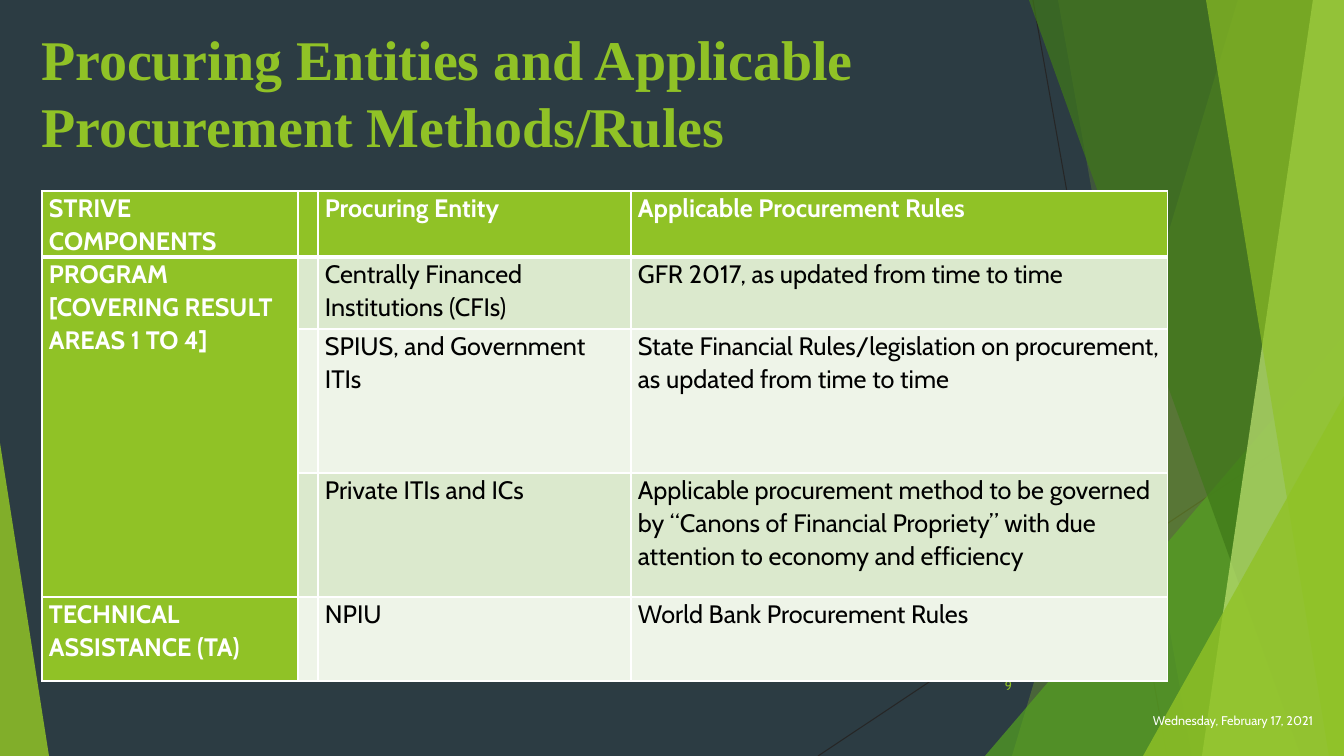
from dataclasses import dataclass

from lxml import etree
from pptx import Presentation
from pptx.dml import color
from pptx.enum import shapes, text
from pptx.oxml import ns
from pptx.util import Emu, Pt

SCALE = 12192000 / 1344  # EMU per px
WIDTH, HEIGHT = 1344, 756
LIME, WHITE, BLACK = "90C226", "FFFFFF", "000000"
LIGHT_BANDS = ("DBE9CD", "EEF4E8")
BODY_FONT, TITLE_FONT = "Cabin", "Times New Roman"


@dataclass
class Ray:
    start: tuple[int, int]
    end: tuple[int, int]


@dataclass
class Shard:
    """Polygon reaching the right edge, from its upper to its lower left corner."""
    top_x: int
    bottom_x: int
    fill: str
    opacity: int


@dataclass
class Wedge:
    """Right triangle standing on the bottom edge."""
    left: int
    top: int
    width: int
    apex: float
    fill: str
    opacity: int


@dataclass
class Label:
    words: str
    left: int
    top: int
    width: int
    height: int
    tint: str


RAYS = [Ray((1033, 0), (1167, 756)), Ray((1344, 406), (818, 756))]
FACETS = [
    Shard(1238, 1012, LIME, 30),
    Shard(1058, 1192, LIME, 20),
    Wedge(985, 336, 359, 1, "54A021", 72),
    Shard(1029, 1301, "3F7819", 70),
    Shard(1313, 1202, "C0E474", 70),
    Shard(1206, 1329, LIME, 65),
    Wedge(1143, 396, 201, 1, LIME, 80),
    Wedge(0, 443, 49, 0, LIME, 85),
]
LABELS = [
    Label("Wednesday, February 17, 2021", 1126, 701, 197, 40, WHITE),
    Label("9", 947, 666, 75, 40, LIME),
]
COLUMNS = [256, 20, 313, 537]
ROWS = [66, 72, 144, 124, 84]
ENTRIES = [
    ["STRIVE COMPONENTS", "", "Procuring Entity", "Applicable Procurement Rules"],
    ["PROGRAM [COVERING RESULT AREAS 1 TO 4]", "",
     "Centrally Financed Institutions (CFIs)",
     "GFR 2017, as updated from time to time"],
    ["", "", "SPIUS, and Government ITIs",
     "State Financial Rules/legislation on procurement, as updated from time to time"],
    ["", "", "Private ITIs and ICs",
     "Applicable procurement method to be governed by “Canons of Financial Propriety” "
     "with due attention to economy and efficiency"],
    ["TECHNICAL ASSISTANCE (TA)", "", "NPIU", "World Bank Procurement Rules"],
]


def px(length: float) -> Emu:
    return Emu(round(length * SCALE))


def paint(target, tint: str, opacity: int = 100) -> None:
    """Give a fill a solid colour."""
    target.solid()
    target.fore_color.rgb = color.RGBColor.from_string(tint)
    if opacity < 100:
        swatch = target._xPr.find(".//" + ns.qn("a:srgbClr"))
        etree.SubElement(swatch, ns.qn("a:alpha"), val=str(opacity * 1000))


def style(para, name: str, size: int, tint: str, bold: bool = False) -> None:
    para.font.name = name
    para.font.size = Pt(size)
    para.font.bold = bold
    paint(para.font.fill, tint)


def draw_ray(page, ray: Ray) -> None:
    line = page.shapes.add_connector(
        shapes.MSO_CONNECTOR.STRAIGHT, *map(px, ray.start + ray.end))
    line.line.width = Pt(0.75)
    paint(line.line.fill, "262626")
    etree.SubElement(line._element.spPr, ns.qn("a:effectLst"))


def draw_facet(page, facet: Shard | Wedge) -> None:
    if isinstance(facet, Shard):
        builder = page.shapes.build_freeform(facet.top_x, 0, scale=SCALE)
        builder.add_line_segments(
            [(WIDTH, 0), (WIDTH, HEIGHT), (facet.bottom_x, HEIGHT)], close=True)
        shape = builder.convert_to_shape()
    else:
        shape = page.shapes.add_shape(
            shapes.MSO_SHAPE.ISOSCELES_TRIANGLE, px(facet.left), px(facet.top),
            px(facet.width), px(HEIGHT - facet.top))
        shape.adjustments[0] = facet.apex
    shape.shadow.inherit = False
    shape.line.fill.background()
    paint(shape.fill, facet.fill, facet.opacity)


def draw_label(page, label: Label) -> None:
    box = page.shapes.add_textbox(
        px(label.left), px(label.top), px(label.width), px(label.height))
    frame = box.text_frame
    frame.word_wrap = True
    frame.vertical_anchor = text.MSO_ANCHOR.MIDDLE
    para = frame.paragraphs[0]
    para.text = label.words
    para.alignment = text.PP_ALIGN.RIGHT
    style(para, BODY_FONT, 9, label.tint)


def set_title(page, words: str) -> None:
    box = page.shapes.title
    box.left, box.top, box.width, box.height = map(px, (31, 18, 1095, 146))
    frame = box.text_frame
    frame.word_wrap = True
    frame.auto_size = text.MSO_AUTO_SIZE.NONE
    frame.vertical_anchor = text.MSO_ANCHOR.BOTTOM
    para = frame.paragraphs[0]
    para.text = words
    para.alignment = text.PP_ALIGN.LEFT
    para.line_spacing = 1.0
    style(para, TITLE_FONT, 40, LIME, bold=True)


def set_borders(cell, bottom: float, top: float) -> None:
    properties = cell._tc.get_or_add_tcPr()
    for side, width in (("L", 1), ("R", 1), ("T", top), ("B", bottom)):
        edge = etree.SubElement(properties, ns.qn(f"a:ln{side}"), w=str(Pt(width)))
        solid = etree.SubElement(edge, ns.qn("a:solidFill"))
        etree.SubElement(solid, ns.qn("a:srgbClr"), val=WHITE)


def draw_table(page) -> None:
    table = page.shapes.add_table(
        len(ROWS), len(COLUMNS), px(42), px(191), px(sum(COLUMNS)), px(sum(ROWS))).table
    for column, width in zip(table.columns, COLUMNS):
        column.width = px(width)
    for row, height in zip(table.rows, ROWS):
        row.height = px(height)
    for r, entries in enumerate(ENTRIES):
        for c, words in enumerate(entries):
            cell = table.cell(r, c)
            heading = r == 0 or c == 0
            set_borders(cell, bottom=3 if r == 0 else 1, top=3 if r == 1 else 1)
            paint(cell.fill, LIME if heading else LIGHT_BANDS[(r - 1) % 2])
            cell.margin_left = cell.margin_right = px(7)
            cell.margin_top = cell.margin_bottom = 0
            para = cell.text_frame.paragraphs[0]
            para.text = words
            para.line_spacing = 1.07
            style(para, BODY_FONT, 18, WHITE if heading else BLACK, bold=heading)
    table.cell(1, 0).merge(table.cell(3, 0))


def main() -> None:
    deck = Presentation()
    deck.slide_width, deck.slide_height = px(WIDTH), px(HEIGHT)
    page = deck.slides.add_slide(deck.slide_layouts.get_by_name("Title Only"))
    paint(page.background.fill, "2C3C43")

    # Backdrop of thin rays and translucent facets
    for ray in RAYS:
        draw_ray(page, ray)
    for facet in FACETS:
        draw_facet(page, facet)

    # Title, date and page number, table
    set_title(page, "Procuring Entities and Applicable Procurement Methods/Rules")
    for label in LABELS:
        draw_label(page, label)
    draw_table(page)
    deck.save("out.pptx")


if __name__ == "__main__":
    main()
